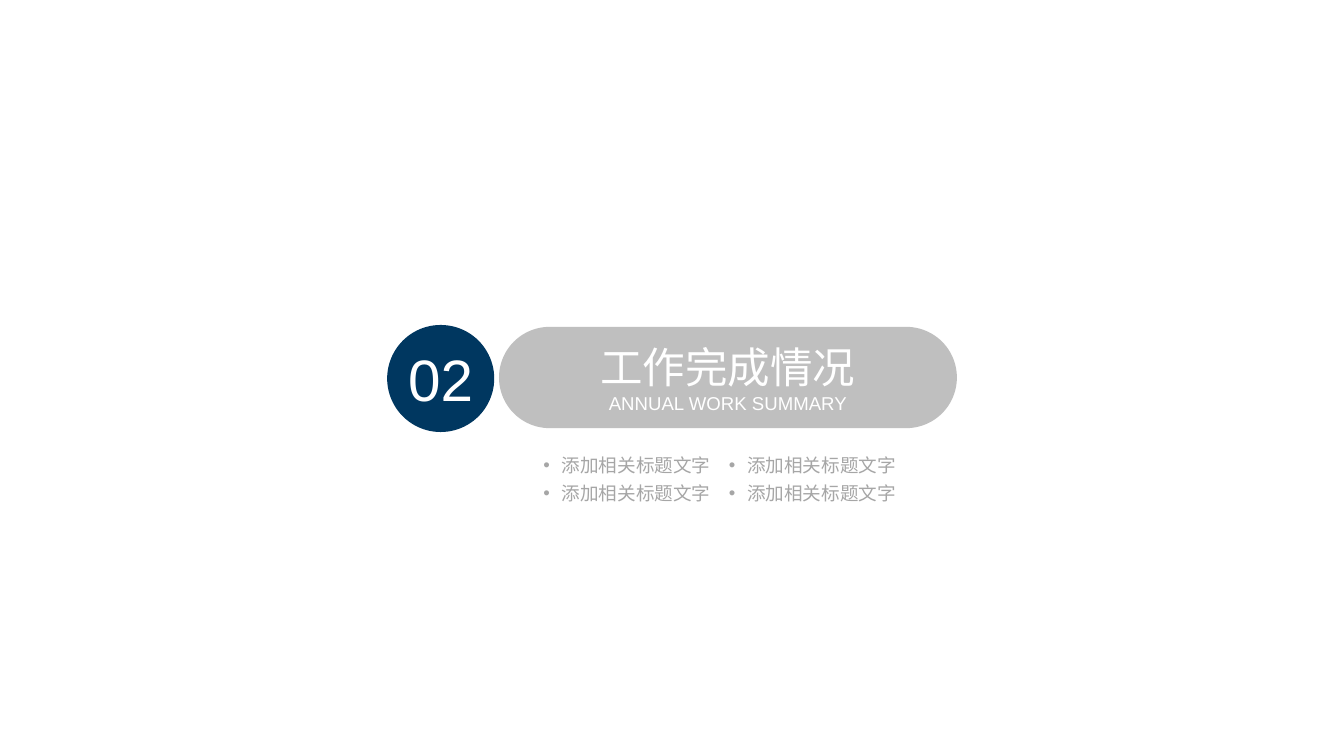
import pptx
import pptx.dml.color
import pptx.enum.shapes
import pptx.enum.text
import pptx.util

Inches = pptx.util.Inches
Pt = pptx.util.Pt
Color = pptx.dml.color.RGBColor
Kind = pptx.enum.shapes.MSO_SHAPE
Text = pptx.enum.text

NAVY = Color(0x00, 0x37, 0x60)
SILVER = Color(0xBF, 0xBF, 0xBF)
GRAY = Color(0xA6, 0xA6, 0xA6)
WHITE = Color(0xFF, 0xFF, 0xFF)

ITEM = "添加相关标题文字"
FRAME = {
    "margin_left": 0, "margin_top": 0, "margin_right": 0, "margin_bottom": 0,
    "auto_size": Text.MSO_AUTO_SIZE.NONE,
}
MIDDLE = {**FRAME, "word_wrap": True, "vertical_anchor": Text.MSO_ANCHOR.MIDDLE}
LIST = {**FRAME, "word_wrap": False, "vertical_anchor": Text.MSO_ANCHOR.TOP}
CENTER = {"alignment": Text.PP_ALIGN.CENTER, "space_before": Pt(0)}
ROW = {**CENTER, "line_spacing": Pt(21)}


def apply(target, values):
    """Set each named attribute on the target."""
    for name, value in values.items():
        setattr(target, name, value)


def place(shape, box):
    """Move a shape to a box given in inches."""
    names = ("left", "top", "width", "height")
    apply(shape, dict(zip(names, map(Inches, box))))


def write(shape, lines, color, frame, style):
    """Fill a shape with paragraphs of (text, size) lines."""
    body = shape.text_frame
    apply(body, frame)
    body.text = "\n".join(text for text, size in lines)
    for para, (text, size) in zip(body.paragraphs, lines):
        apply(para, style)
        font = para.runs[0].font
        apply(font, {"name": "Arial", "size": Pt(size)})
        font.color.rgb = color


def draw(slide, kind, box, color):
    """Add a flat preset shape without outline."""
    shape = slide.shapes.add_shape(kind, *map(Inches, box))
    shape.shadow.inherit = False
    shape.fill.solid()
    shape.fill.fore_color.rgb = color
    shape.line.fill.background()
    return shape


def badge(slide, box):
    """Draw the round section number."""
    disc = draw(slide, Kind.OVAL, box, NAVY)
    write(disc, [("02", 44)], WHITE, MIDDLE, CENTER)


def banner(slide, box):
    """Draw the pill with the section title on it."""
    left, top, width, height = box
    pill = draw(slide, Kind.ROUNDED_RECTANGLE, box, SILVER)
    pill.adjustments[0] = 0.5
    title = slide.shapes.title
    title.element.addprevious(pill.element)
    place(title, (left + 1.01, top + 0.15, 2.77, 0.77))
    lines = [("工作完成情况", 32), ("ANNUAL WORK SUMMARY", 14)]
    write(title, lines, WHITE, MIDDLE, CENTER)


def topics(slide, box):
    """Fill the two bulleted columns."""
    left, top, width, height = box
    wide = 1.76
    for col in range(2):
        column = slide.placeholders[col + 1]
        place(column, (left + col * (width - wide), top, wide, height))
        write(column, [(ITEM, 14)] * 2, GRAY, LIST, ROW)
        for para in column.text_frame.paragraphs:
            props = para._p.get_or_add_pPr()
            props.set("marL", str(Inches(0.19)))
            props.set("indent", str(Inches(-0.19)))
            mark = pptx.oxml.xmlchemy.OxmlElement("a:buChar")
            mark.set("char", "•")
            props.append(mark)


def main():
    """Build and save the section slide."""
    deck = pptx.Presentation()
    apply(deck, {"slide_width": Inches(14.06), "slide_height": Inches(7.91)})
    slide = deck.slides.add_slide(deck.slide_layouts[3])
    for spare in list(slide.placeholders)[3:]:
        spare.element.getparent().remove(spare.element)
    banner(slide, (5.22, 3.42, 4.79, 1.06))
    badge(slide, (4.05, 3.4, 1.12, 1.12))
    topics(slide, (5.68, 4.69, 3.7, 0.53))
    deck.save("out.pptx")


if __name__ == "__main__":
    main()
